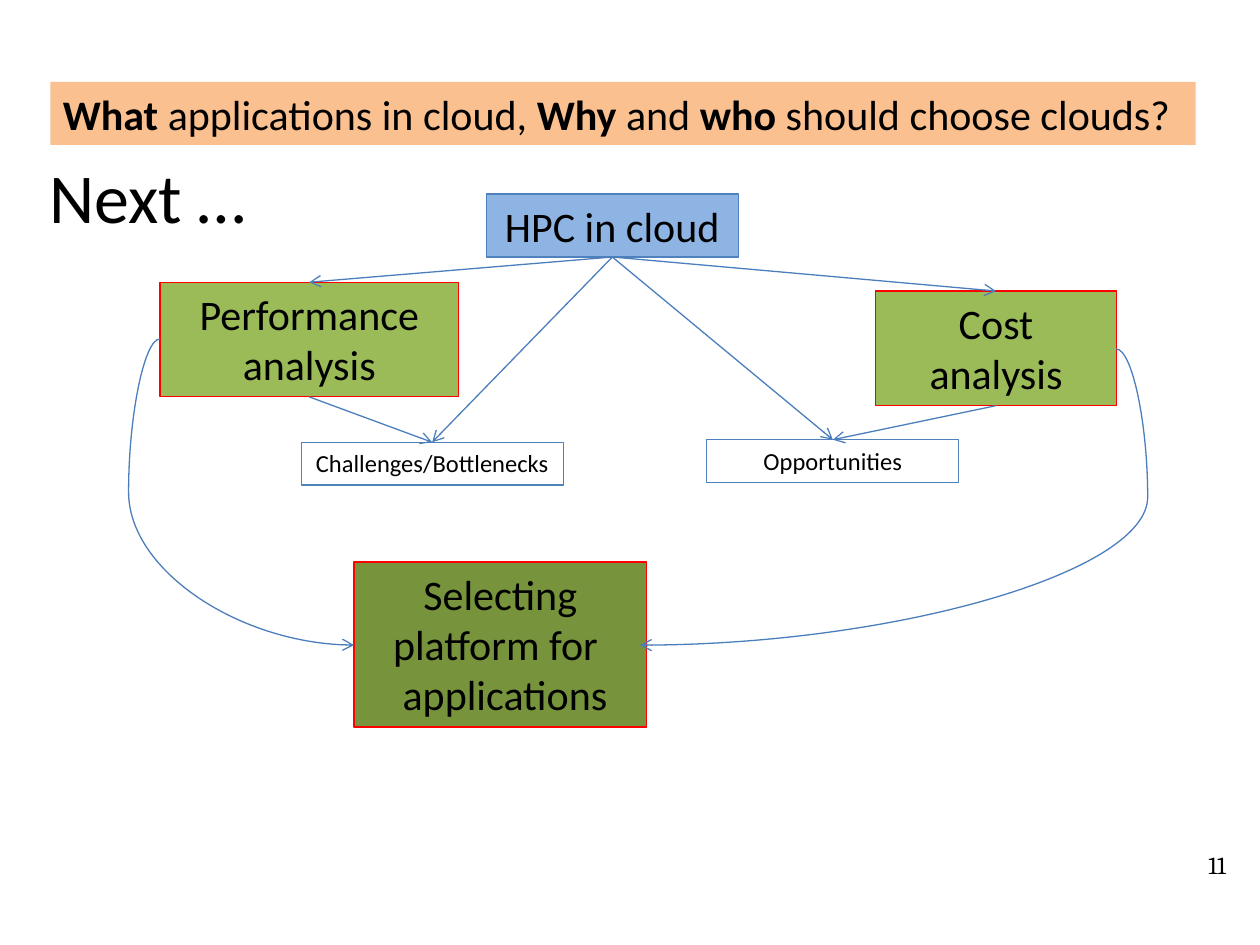
from dataclasses import dataclass
from typing import Optional

from pptx import Presentation
from pptx.dml.color import RGBColor
from pptx.enum import shapes as es, text as et
from pptx.oxml import ns, xmlchemy
from pptx.util import Inches, Pt


@dataclass(frozen=True)
class Theme:
    font: str = "Calibri"
    number_font: str = "Cambria"
    ink: str = "000000"
    blue: str = "8EB4E3"
    green: str = "9BBB59"
    dark_green: str = "77933C"
    peach: str = "FAC090"
    blue_border: str = "4F81BD"
    red_border: str = "FF0000"
    arrow: str = "4B7EBC"
    title: int = 40
    body: int = 24
    small: int = 14
    line: float = 0.75


THEME = Theme()
TOP, BOTTOM = 0, 2  # connection sites of a rectangle


@dataclass(frozen=True)
class Box:
    lines: tuple[str, ...]
    left: float
    top: float
    width: float
    height: float
    fill: Optional[str]
    border: Optional[str]
    size: int = THEME.body


@dataclass(frozen=True)
class Curve:
    start: tuple[float, float]
    end: tuple[float, float]
    bend: int  # thousandths of a percent of the width


BOXES = {
    "hpc": Box(("HPC in cloud",), 3.86, 1.54, 2, 0.5, THEME.blue, THEME.blue_border),
    "performance": Box(("Performance analysis",), 1.27, 2.24, 2.37, 0.91,
                       THEME.green, THEME.red_border),
    "cost": Box(("Cost analysis",), 6.95, 2.31, 1.91, 0.91, THEME.green, THEME.red_border),
    "opportunities": Box(("Opportunities",), 5.61, 3.49, 2, 0.34,
                         None, THEME.blue_border, THEME.small),
    "challenges": Box(("Challenges/Bottlenecks",), 2.39, 3.51, 2.08, 0.34,
                      None, THEME.blue_border, THEME.small),
    "selection": Box(("Selecting platform for ", " applications"), 2.81, 4.46, 2.32, 1.31,
                     THEME.dark_green, THEME.red_border),
}
ARROWS = [
    ("hpc", "performance"), ("hpc", "cost"), ("hpc", "opportunities"),
    ("hpc", "challenges"), ("performance", "challenges"), ("cost", "opportunities"),
]
CURVES = [
    Curve((1.27, 2.69), (2.81, 5.12), -16200),
    Curve((8.86, 2.77), (5.08, 5.12), -6600),
]
BANNER = Box(("",), 0.4, 0.65, 9.09, 0.5, THEME.peach, None)
QUESTION = [("What", True), (" applications in cloud, ", False), ("Why", True),
            (" and ", False), ("who ", True), ("should choose clouds?", False)]


def style(paragraph, size: int, align, font: str = THEME.font) -> None:
    paragraph.alignment = align
    paragraph.font.name = font
    paragraph.font.size = Pt(size)
    paragraph.font.color.rgb = RGBColor.from_string(THEME.ink)


def place(shape, left: float, top: float, width: float, height: float) -> None:
    shape.left, shape.top = Inches(left), Inches(top)
    shape.width, shape.height = Inches(width), Inches(height)


def draw_box(slide, box: Box, align=et.PP_ALIGN.CENTER):
    shape = slide.shapes.add_shape(
        es.MSO_SHAPE.RECTANGLE, Inches(box.left), Inches(box.top),
        Inches(box.width), Inches(box.height))
    shape.shadow.inherit = False
    if box.fill:
        shape.fill.solid()
        shape.fill.fore_color.rgb = RGBColor.from_string(box.fill)
    else:
        shape.fill.background()
    if box.border:
        shape.line.color.rgb = RGBColor.from_string(box.border)
        shape.line.width = Pt(THEME.line)
    else:
        shape.line.fill.background()
    frame = shape.text_frame
    frame.word_wrap = True
    frame.auto_size = et.MSO_AUTO_SIZE.SHAPE_TO_FIT_TEXT
    frame.vertical_anchor = et.MSO_ANCHOR.TOP
    frame.text = "\n".join(box.lines)
    for paragraph in frame.paragraphs:
        style(paragraph, box.size, align)
    return shape


def draw_arrow(slide, kind, start=(0, 0), end=(0, 0)):
    arrow = slide.shapes.add_connector(kind, *map(Inches, start + end))
    arrow.line.color.rgb = RGBColor.from_string(THEME.arrow)
    arrow.line.width = Pt(THEME.line)
    properties = arrow.element.spPr
    head = xmlchemy.OxmlElement("a:tailEnd")
    head.set("type", "arrow")
    properties.find(ns.qn("a:ln")).append(head)
    properties.append(xmlchemy.OxmlElement("a:effectLst"))
    return arrow


def draw_curve(slide, curve: Curve) -> None:
    arrow = draw_arrow(slide, es.MSO_CONNECTOR.CURVE, curve.start, curve.end)
    bend = xmlchemy.OxmlElement("a:gd")
    bend.set("name", "adj1")
    bend.set("fmla", f"val {curve.bend}")
    arrow.element.spPr.find(ns.qn("a:prstGeom")).find(ns.qn("a:avLst")).append(bend)


def main() -> None:
    deck = Presentation()
    deck.slide_width, deck.slide_height = Inches(10), Inches(7.5)
    slide = deck.slides.add_slide(deck.slide_layouts[5])

    # Title
    heading = slide.shapes.title
    place(heading, 0.29, 1.17, 1.95, 0.77)
    heading.text_frame.text = "Next …"
    heading.text_frame.word_wrap = True
    heading.text_frame.auto_size = et.MSO_AUTO_SIZE.SHAPE_TO_FIT_TEXT
    heading.text_frame.vertical_anchor = et.MSO_ANCHOR.TOP
    style(heading.text_frame.paragraphs[0], THEME.title, et.PP_ALIGN.LEFT)

    # Topic boxes and the arrows between them
    topics = {key: draw_box(slide, box) for key, box in BOXES.items()}
    for source, target in ARROWS:
        arrow = draw_arrow(slide, es.MSO_CONNECTOR.STRAIGHT)
        arrow.begin_connect(topics[source], BOTTOM)
        arrow.end_connect(topics[target], TOP)
    for curve in CURVES:
        draw_curve(slide, curve)

    # Question banner
    banner = draw_box(slide, BANNER, et.PP_ALIGN.LEFT)
    question = banner.text_frame.paragraphs[0]
    for words, bold in QUESTION:
        run = question.add_run()
        run.text = words
        run.font.bold = bold

    # Slide number
    number = slide.shapes.add_textbox(Inches(9.16), Inches(6.58), Inches(0.67), Inches(0.57))
    number.text_frame.word_wrap = True
    number.text_frame.vertical_anchor = et.MSO_ANCHOR.MIDDLE
    number.text_frame.text = "11"
    style(number.text_frame.paragraphs[0], THEME.small, et.PP_ALIGN.RIGHT, THEME.number_font)

    deck.save("out.pptx")


if __name__ == "__main__":
    main()
